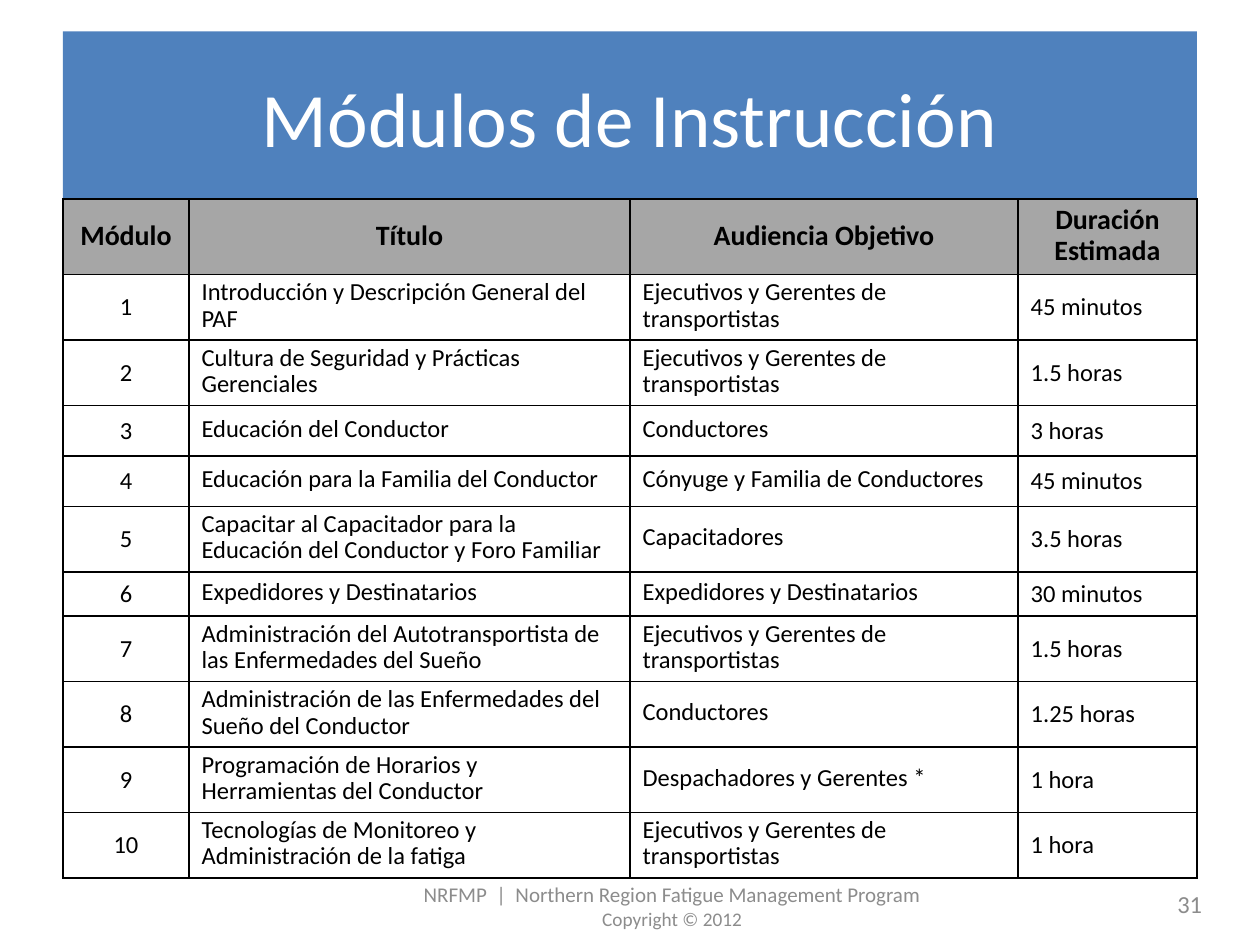
from dataclasses import dataclass
from typing import Optional

from lxml.etree import SubElement
from pptx import Presentation
from pptx.dml.color import RGBColor
from pptx.enum.shapes import MSO_SHAPE
from pptx.enum.text import MSO_ANCHOR, PP_ALIGN
from pptx.oxml.ns import qn
from pptx.util import Inches, Pt

FONT = "Calibri"
BLUE = RGBColor(0x4F, 0x81, 0xBD)
HEADER_GRAY = RGBColor(0xA6, 0xA6, 0xA6)
FOOTER_GRAY = RGBColor(0x8C, 0x8C, 0x8C)
BLACK = RGBColor(0, 0, 0)
WHITE = RGBColor(0xFF, 0xFF, 0xFF)

LEFT, WIDTH = 0.5, 9
TABLE_TOP = 1.58
COLUMN_WIDTHS = (1, 3.5, 3.08, 1.42)
HEADER_HEIGHT = 0.6
HEADINGS = ("Módulo", "Título", "Audiencia Objetivo", "Duración Estimada")
MANAGERS = "Ejecutivos y Gerentes de transportistas"


@dataclass(frozen=True)
class Module:
    title: str
    audience: str
    duration: str
    height: float = 0.52


@dataclass(frozen=True)
class TextStyle:
    size: float
    color: RGBColor = BLACK
    bold: bool = False
    align: PP_ALIGN = PP_ALIGN.LEFT
    line_points: Optional[float] = None


TITLE = TextStyle(44, WHITE, align=PP_ALIGN.CENTER)
HEADING = TextStyle(16, bold=True, align=PP_ALIGN.CENTER, line_points=18)
NUMBER = TextStyle(14, align=PP_ALIGN.CENTER)
DESCRIPTION = TextStyle(14, line_points=15)
DURATION = TextStyle(14)
PROGRAM = TextStyle(12, FOOTER_GRAY, align=PP_ALIGN.CENTER)
COPYRIGHT = TextStyle(11, FOOTER_GRAY, align=PP_ALIGN.CENTER)
PAGE_NUMBER = TextStyle(14, FOOTER_GRAY, align=PP_ALIGN.RIGHT)

MODULES = (
    Module("Introducción y Descripción General del PAF", MANAGERS, "45 minutos"),
    Module("Cultura de Seguridad y Prácticas Gerenciales", MANAGERS, "1.5 horas"),
    Module("Educación del Conductor", "Conductores", "3 horas", 0.4),
    Module("Educación para la Familia del Conductor",
           "Cónyuge y Familia de Conductores", "45 minutos", 0.4),
    Module("Capacitar al Capacitador para la Educación del Conductor y Foro Familiar",
           "Capacitadores", "3.5 horas"),
    Module("Expedidores y Destinatarios", "Expedidores y Destinatarios", "30 minutos", 0.35),
    Module("Administración del Autotransportista de las Enfermedades del Sueño",
           MANAGERS, "1.5 horas"),
    Module("Administración de las Enfermedades del Sueño del Conductor",
           "Conductores", "1.25 horas"),
    Module("Programación de Horarios y Herramientas del Conductor",
           "Despachadores y Gerentes *", "1 hora"),
    Module("Tecnologías de Monitoreo y Administración de la fatiga", MANAGERS, "1 hora"),
)


def write(para, text: str, style: TextStyle) -> None:
    para.alignment = style.align
    if style.line_points:
        para.line_spacing = Pt(style.line_points)
    span = para.add_run()
    span.text = text
    span.font.name = FONT
    span.font.size = Pt(style.size)
    span.font.bold = style.bold
    span.font.color.rgb = style.color


def place(shape, left: float, top: float, width: float, height: float) -> None:
    shape.left, shape.top = Inches(left), Inches(top)
    shape.width, shape.height = Inches(width), Inches(height)


def add_title(page) -> None:
    title = page.shapes.title
    place(title, LEFT, 0.3, WIDTH, 1.25)
    title.text_frame.vertical_anchor = MSO_ANCHOR.MIDDLE
    write(title.text_frame.paragraphs[0], "Módulos de Instrucción", TITLE)
    banner = page.shapes.add_shape(
        MSO_SHAPE.RECTANGLE, Inches(LEFT), Inches(0.25), Inches(WIDTH), Inches(1.33))
    banner.shadow.inherit = False
    banner.fill.solid()
    banner.fill.fore_color.rgb = BLUE
    banner.line.fill.background()
    title.element.addprevious(banner.element)


def add_borders(cell) -> None:
    properties = cell._tc.get_or_add_tcPr()
    for index, side in enumerate(("lnL", "lnR", "lnT", "lnB")):
        line = properties.makeelement(qn(f"a:{side}"), {"w": str(Pt(1))})
        fill = SubElement(line, qn("a:solidFill"))
        SubElement(fill, qn("a:srgbClr"), val=str(BLACK))
        properties.insert(index, line)


def fill_cell(cell, text: str, style: TextStyle, color: Optional[RGBColor] = None) -> None:
    cell.vertical_anchor = MSO_ANCHOR.MIDDLE
    if color is None:
        cell.fill.background()
    else:
        cell.fill.solid()
        cell.fill.fore_color.rgb = color
    add_borders(cell)
    write(cell.text_frame.paragraphs[0], text, style)


def add_module_table(page) -> None:
    heights = [HEADER_HEIGHT] + [module.height for module in MODULES]
    table = page.shapes.add_table(
        len(heights), len(COLUMN_WIDTHS), Inches(LEFT), Inches(TABLE_TOP),
        Inches(WIDTH), Inches(sum(heights))).table
    table.horz_banding = False
    for column, width in zip(table.columns, COLUMN_WIDTHS):
        column.width = Inches(width)
    for row, height in zip(table.rows, heights):
        row.height = Inches(height)
    for column, heading in enumerate(HEADINGS):
        fill_cell(table.cell(0, column), heading, HEADING, HEADER_GRAY)
    styles = (NUMBER, DESCRIPTION, DESCRIPTION, DURATION)
    for number, module in enumerate(MODULES, start=1):
        texts = (str(number), module.title, module.audience, module.duration)
        for column, (text, style) in enumerate(zip(texts, styles)):
            fill_cell(table.cell(number, column), text, style)


def add_text(page, left: float, top: float, width: float, height: float,
             lines: tuple[tuple[str, TextStyle], ...]) -> None:
    box = page.shapes.add_textbox(Inches(left), Inches(top), Inches(width), Inches(height))
    frame = box.text_frame
    frame.word_wrap = True
    frame.vertical_anchor = MSO_ANCHOR.MIDDLE
    for index, (text, style) in enumerate(lines):
        para = frame.add_paragraph() if index else frame.paragraphs[0]
        write(para, text, style)


def main() -> None:
    deck = Presentation()
    deck.slide_width, deck.slide_height = Inches(10), Inches(7.5)
    page = deck.slides.add_slide(deck.slide_layouts[5])
    add_title(page)
    add_module_table(page)
    add_text(page, 7.31, 6.97, 2.33, 0.4, (("31", PAGE_NUMBER),))
    add_text(page, 3, 7, 4.67, 0.38, (
        ("NRFMP  |  Northern Region Fatigue Management Program", PROGRAM),
        ("Copyright © 2012", COPYRIGHT),
    ))
    deck.save("out.pptx")


if __name__ == "__main__":
    main()
